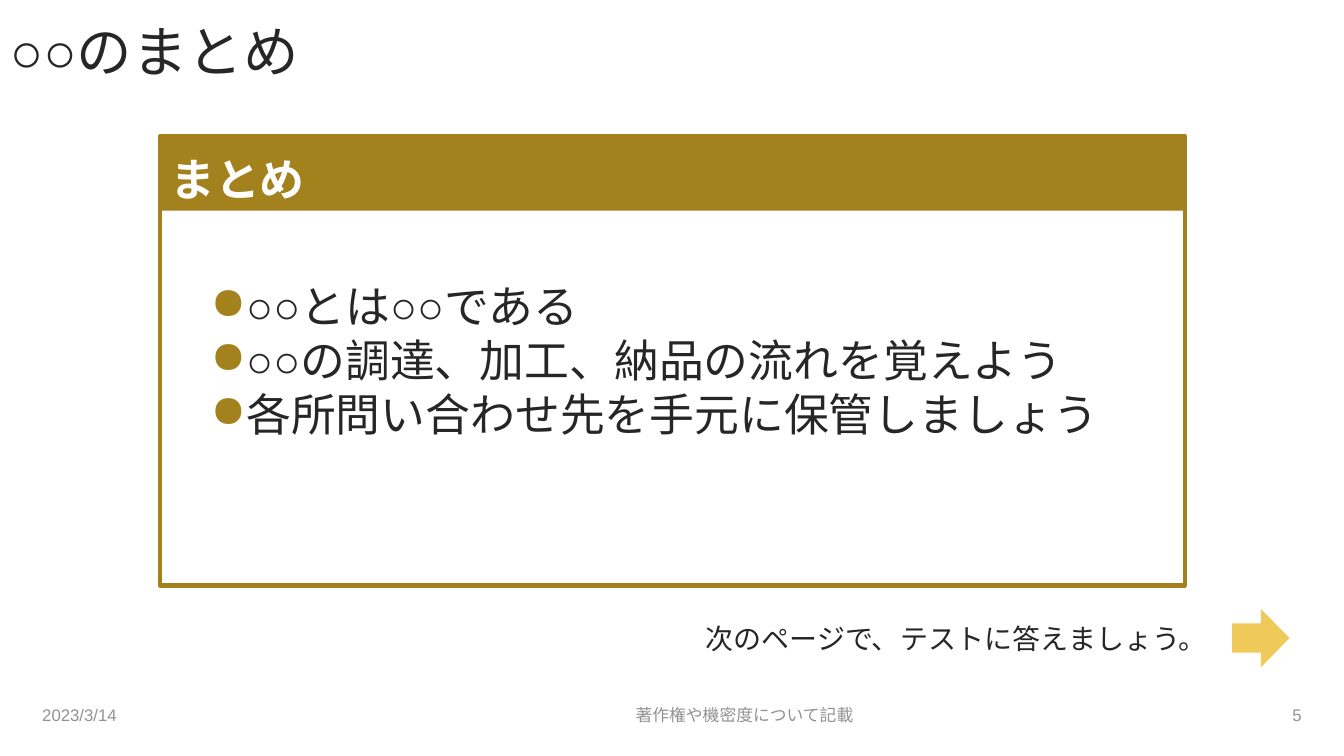
from lxml import etree
from pptx import Presentation
from pptx.dml.color import RGBColor
from pptx.enum.shapes import MSO_SHAPE
from pptx.enum.text import MSO_ANCHOR, PP_ALIGN
from pptx.oxml.ns import qn
from pptx.util import Pt

RECTANGLE, RIGHT_ARROW = MSO_SHAPE.RECTANGLE, MSO_SHAPE.RIGHT_ARROW
TOP, MIDDLE, BOTTOM = MSO_ANCHOR.TOP, MSO_ANCHOR.MIDDLE, MSO_ANCHOR.BOTTOM
LEFT, CENTER, RIGHT = PP_ALIGN.LEFT, PP_ALIGN.CENTER, PP_ALIGN.RIGHT

EMU_PER_PX = 9144  # 100 px to the inch


def px(length):
    return length * EMU_PER_PX


def color(hex_code):
    return RGBColor.from_string(hex_code)


class SlideBuilder:
    GOLD, YELLOW, WHITE = "A3811D", "F0C95B", "FFFFFF"
    INK, GRAY = "262626", "929292"
    LATIN, JAPANESE = "Arial", "Noto Sans CJK JP"

    def __init__(self, slide):
        self.slide = slide

    def set_text(self, frame, lines, size, ink, align=LEFT, anchor=TOP,
                 font=LATIN, bold=False, spacing=None):
        frame.word_wrap = True
        frame.vertical_anchor = anchor
        frame.text = "\n".join(lines)
        for paragraph in frame.paragraphs:
            paragraph.alignment = align
            paragraph.line_spacing = spacing
            paragraph.font.name = font
            paragraph.font.size = Pt(size)
            paragraph.font.bold = bold
            paragraph.font.color.rgb = color(ink)
            # East Asian typeface
            east_asian = etree.SubElement(paragraph.font._element, qn("a:ea"))
            east_asian.set("typeface", font)

    def text(self, box, lines, size, ink, **style):
        frame = self.slide.shapes.add_textbox(*map(px, box)).text_frame
        self.set_text(frame, lines, size, ink, **style)
        return frame

    def bullets(self, box, lines, size, ink, **style):
        frame = self.text(box, lines, size, ink, **style)
        for paragraph in frame.paragraphs:
            properties = paragraph._p.get_or_add_pPr()
            properties.set("marL", str(px(31)))
            properties.set("indent", str(-px(31)))
            bullet_color = etree.Element(qn("a:buClr"))
            etree.SubElement(bullet_color, qn("a:srgbClr")).set("val", self.GOLD)
            bullet = etree.Element(qn("a:buChar"))
            bullet.set("char", "●")
            run_defaults = properties.find(qn("a:defRPr"))
            run_defaults.addprevious(bullet_color)
            run_defaults.addprevious(bullet)

    def shape(self, kind, box, fill, line=None, line_width=0):
        shape = self.slide.shapes.add_shape(kind, *map(px, box))
        shape.shadow.inherit = False
        shape.fill.solid()
        shape.fill.fore_color.rgb = color(fill)
        if line:
            shape.line.color.rgb = color(line)
            shape.line.width = Pt(line_width)
        else:
            shape.line.fill.background()
        return shape


def main():
    deck = Presentation()
    deck.slide_width, deck.slide_height = px(1333), px(750)
    page = SlideBuilder(deck.slides.add_slide(deck.slide_layouts[6]))

    # Title
    page.text((0, 21, 1268, 66), ["○○のまとめ"], 39.6, page.INK,
              anchor=MIDDLE, spacing=0.9)

    # Summary panel with its heading band
    page.shape(RECTANGLE, (159, 135, 1016, 446), page.WHITE, page.GOLD, 3)
    heading = page.shape(RECTANGLE, (159, 135, 1016, 74), page.GOLD)
    page.set_text(heading.text_frame, ["まとめ"], 32, page.WHITE,
                  anchor=BOTTOM, font=page.JAPANESE, bold=True)
    page.bullets((199, 272, 938, 172), [
        "○○とは○○である",
        "○○の調達、加工、納品の流れを覚えよう",
        "各所問い合わせ先を手元に保管しましょう",
    ], 32, page.INK)

    # Pointer to the next page
    page.shape(RIGHT_ARROW, (1222, 604, 57, 58), page.YELLOW)
    page.text((532, 612, 675, 44), ["次のページで、テストに答えましょう。"],
              20, page.INK, align=RIGHT)

    # Footer
    for left, width, words, align in (
        (32, 249, "2023/3/14", LEFT),
        (303, 871, "著作権や機密度について記載", CENTER),
        (1201, 100, "5", RIGHT),
    ):
        page.text((left, 689, width, 40), [words], 12, page.GRAY,
                  align=align, anchor=MIDDLE)

    deck.save("out.pptx")


if __name__ == "__main__":
    main()
